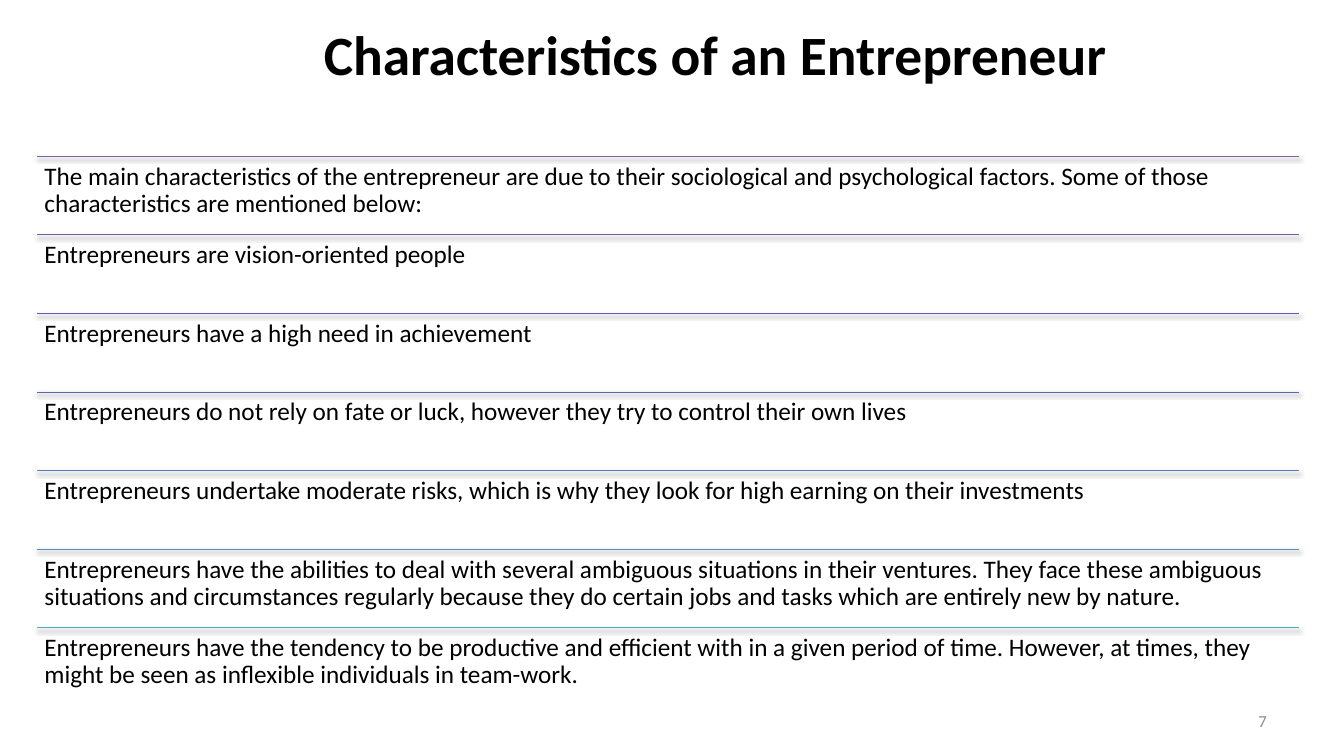
from lxml.etree import SubElement
from pptx import Presentation
from pptx.dml.color import RGBColor
from pptx.enum.shapes import MSO_CONNECTOR
from pptx.enum.text import MSO_ANCHOR, PP_ALIGN
from pptx.oxml.ns import qn
from pptx.util import Cm, Pt

CHARACTERISTICS = [
    ("8064A2", "The main characteristics of the entrepreneur are due to their sociological and "
               "psychological factors. Some of those characteristics are mentioned below:"),
    ("7160A8", "Entrepreneurs are vision-oriented people"),
    ("5F5BAE", "Entrepreneurs have a high need in achievement"),
    ("5767B4", "Entrepreneurs do not rely on fate or luck, however they try to control their own lives"),
    ("537ABA", "Entrepreneurs undertake moderate risks, which is why they look for high earning on "
               "their investments"),
    ("4F91C0", "Entrepreneurs have the abilities to deal with several ambiguous situations in their "
               "ventures. They face these ambiguous situations and circumstances regularly because "
               "they do certain jobs and tasks which are entirely new by nature."),
    ("4BACC6", "Entrepreneurs have the tendency to be productive and efficient with in a given period "
               "of time. However, at times, they might be seen as inflexible individuals in team-work."),
]
ROW_LEFT, ROW_TOP, ROW_WIDTH, ROW_HEIGHT = 0.94, 3.94, 31.8, 1.98
ROW_INSET = Cm(0.18)


def rgb(value):
    return RGBColor.from_string(value)


def apply(target, values):
    for name, value in values.items():
        setattr(target, name, value)


class SlideBuilder:
    font = "Calibri"
    rule_width = Pt(0.75)

    def __init__(self, slide):
        self.slide = slide

    def text(self, shapes, words, box, size, color="000000", bold=False, frame=None, paragraph=None):
        label = shapes.add_textbox(*map(Cm, box)).text_frame
        apply(label, {"word_wrap": True, **(frame or {})})
        line = label.paragraphs[0]
        apply(line, paragraph or {})
        run = line.add_run()
        run.text = words
        apply(run.font, {"name": self.font, "size": Pt(size), "bold": bold})
        run.font.color.rgb = rgb(color)

    def rule(self, shapes, left, top, width, color):
        divider = shapes.add_connector(
            MSO_CONNECTOR.STRAIGHT, Cm(left), Cm(top), Cm(left + width), Cm(top))
        divider.line.width = self.rule_width
        divider.line.color.rgb = rgb(color)
        effects = SubElement(divider.line._get_or_add_ln().getparent(), qn("a:effectLst"))
        shadow = SubElement(effects, qn("a:outerShdw"), blurRad=str(Pt(3.1)), dist=str(Pt(1.8)),
                            dir="5400000", rotWithShape="0")
        black = SubElement(shadow, qn("a:srgbClr"), val="000000")
        SubElement(black, qn("a:alpha"), val="35000")

    def ruled_list(self, rows):
        shapes = self.slide.shapes.add_group_shape().shapes
        insets = {f"margin_{side}": ROW_INSET for side in ("left", "top", "right", "bottom")}
        for index, (color, words) in enumerate(rows):
            top = ROW_TOP + index * ROW_HEIGHT
            self.rule(shapes, ROW_LEFT, top, ROW_WIDTH, color)
            self.text(shapes, words, (ROW_LEFT, top, ROW_WIDTH, ROW_HEIGHT), 18,
                      frame=insets, paragraph={"line_spacing": 0.9})


def main():
    deck = Presentation()
    apply(deck, {"slide_width": Cm(33.87), "slide_height": Cm(19.05)})
    builder = SlideBuilder(deck.slides.add_slide(deck.slide_layouts[6]))
    shapes = builder.slide.shapes
    builder.text(shapes, "Characteristics of an Entrepreneur", (4.14, 0.46, 26.92, 1.75), 39.6,
                 bold=True,
                 frame={"vertical_anchor": MSO_ANCHOR.MIDDLE, "margin_left": Cm(1.1)},
                 paragraph={"alignment": PP_ALIGN.CENTER})
    builder.ruled_list(CHARACTERISTICS)
    builder.text(shapes, "7", (24.28, 17.65, 7.9, 1.02), 12, color="8C8C8C",
                 frame={"vertical_anchor": MSO_ANCHOR.MIDDLE},
                 paragraph={"alignment": PP_ALIGN.RIGHT})
    deck.save("out.pptx")


if __name__ == "__main__":
    main()
